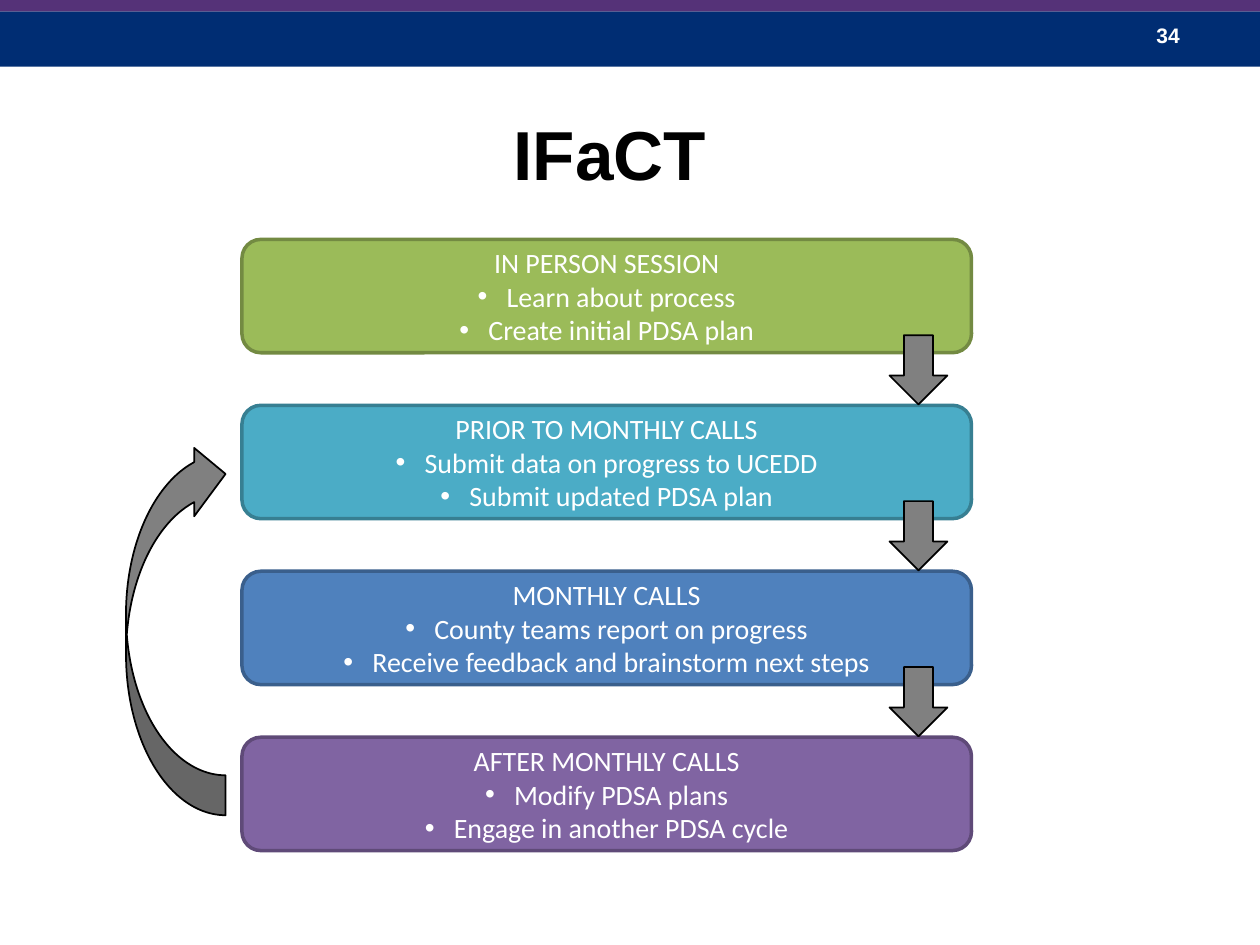
"""Build the IFaCT cycle slide: four linked steps with a return arrow."""
from lxml import etree
from pptx import Presentation, util as u
from pptx.dml.color import RGBColor
from pptx.enum import shapes, text
from pptx.oxml.ns import qn

THEME = {
    "band": "002D73", "strip": "553278", "arrow": "808080",
    "dark": "000000", "light": "FFFFFF",
    "head": "Arial", "body": "Calibri",
    "title": 39.6, "step": 16, "page": 12,
}
STEPS = [
    ("9BBB59", "738A42", "IN PERSON SESSION",
     "Learn about process", "Create initial PDSA plan"),
    ("4BACC6", "377F92", "PRIOR TO MONTHLY CALLS",
     "Submit data on progress to UCEDD", "Submit updated PDSA plan"),
    ("4F81BD", "3A5F8C", "MONTHLY CALLS",
     "County teams report on progress", "Receive feedback and brainstorm next steps"),
    ("8064A2", "5F4A78", "AFTER MONTHLY CALLS",
     "Modify PDSA plans", "Engage in another PDSA cycle"),
]
TOP, PITCH = 1.9, 1.317
KIND = shapes.MSO_SHAPE


def draw(kind, box, fill, line=None, width=1):
    """Add a flat preset shape."""
    shape = slide.shapes.add_shape(kind, *map(u.Inches, box))
    shape.shadow.inherit = False
    shape.fill.solid()
    shape.fill.fore_color.rgb = RGBColor.from_string(fill)
    if line:
        shape.line.color.rgb = RGBColor.from_string(line)
        shape.line.width = u.Pt(width)
    else:
        shape.line.fill.background()
    return shape


def style(para, face, size, color, bold=False):
    """Set the font of every run in a paragraph."""
    for run in para.runs:
        font = run.font
        font.name, font.size, font.bold = THEME[face], u.Pt(THEME[size]), bold
        font.color.rgb = RGBColor.from_string(THEME[color])


deck = Presentation()
deck.slide_width, deck.slide_height = u.Inches(10), u.Inches(7.5)
slide = deck.slides.add_slide(deck.slide_layouts[5])

draw(KIND.RECTANGLE, (0, 0.09, 10, 0.44), THEME["band"])
page = slide.shapes.add_textbox(*map(u.Inches, (9.08, 0.13, 0.75, 0.4)))
page.text_frame.word_wrap = True
page.text_frame.text = "34"
style(page.text_frame.paragraphs[0], "head", "page", "light", True)
draw(KIND.RECTANGLE, (0, -0.03, 10, 0.12), THEME["strip"])

title = slide.shapes.title
title.left, title.top, title.width, title.height = map(u.Inches, (1.1, 0.83, 7.48, 0.76))
title.text_frame.text = "IFaCT"
title.text_frame.auto_size = text.MSO_AUTO_SIZE.NONE
title.text_frame.vertical_anchor = text.MSO_ANCHOR.MIDDLE
title.text_frame.paragraphs[0].alignment = text.PP_ALIGN.CENTER
style(title.text_frame.paragraphs[0], "head", "title", "dark", True)

for row, (fill, edge, *lines) in enumerate(STEPS):
    card = draw(KIND.ROUNDED_RECTANGLE, (1.92, TOP + row * PITCH, 5.79, 0.9), fill, edge, 2)
    frame = card.text_frame
    frame.word_wrap = True
    frame.vertical_anchor = text.MSO_ANCHOR.MIDDLE
    frame.text = "\n".join(lines)
    for spot, para in enumerate(frame.paragraphs):
        para.alignment = text.PP_ALIGN.CENTER
        if spot:
            props = para._p.get_or_add_pPr()
            props.set("marL", str(u.Inches(0.23)))
            props.set("indent", str(-u.Inches(0.23)))
            etree.SubElement(props, qn("a:buFont")).set("typeface", THEME["head"])
            etree.SubElement(props, qn("a:buChar")).set("char", "•")
        style(para, "body", "step", "light")

for row in range(len(STEPS) - 1):
    draw(KIND.DOWN_ARROW, (7.06, TOP + 0.76 + row * PITCH, 0.46, 0.55),
         THEME["arrow"], THEME["dark"])

loop = draw(KIND.CURVED_RIGHT_ARROW, (1, 3.49, 0.79, 2.98), THEME["arrow"], THEME["dark"])
for spot, share in enumerate((0.401, 0.687, 0.315)):
    loop.adjustments[spot] = share
loop.element.spPr.find(qn("a:xfrm")).set("flipV", "1")

deck.save("out.pptx")
